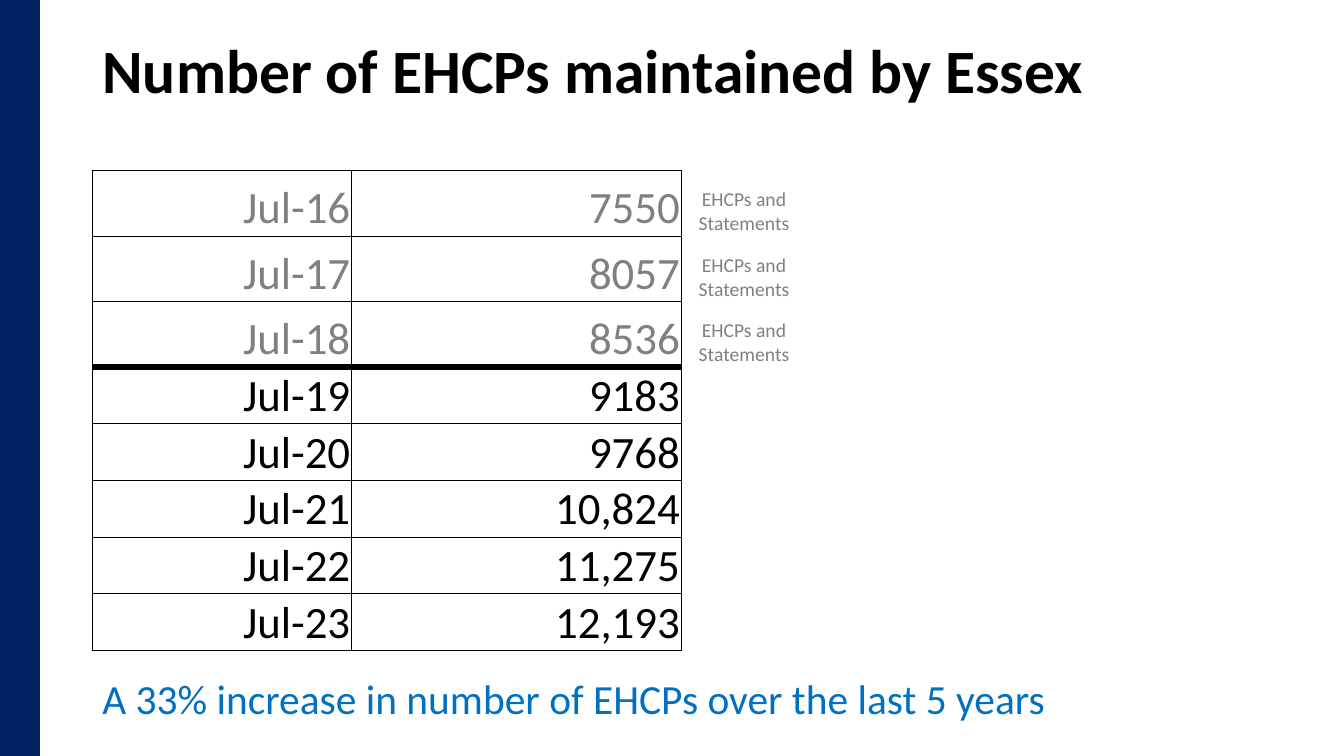
from lxml import etree
from pptx import Presentation
from pptx.dml.color import RGBColor
from pptx.enum.shapes import MSO_SHAPE
from pptx.enum.text import MSO_ANCHOR, MSO_AUTO_SIZE, PP_ALIGN
from pptx.oxml.ns import qn
from pptx.util import Pt

LEFT, RIGHT, CENTER = PP_ALIGN.LEFT, PP_ALIGN.RIGHT, PP_ALIGN.CENTER
TITLE_ONLY = 5
FONT = "Calibri"
BLACK = RGBColor(0x00, 0x00, 0x00)
GREY = RGBColor(0x80, 0x80, 0x80)
BLUE = RGBColor(0x00, 0x70, 0xC0)
NAVY = RGBColor(0x00, 0x20, 0x60)

TITLE = "Number of EHCPs maintained by Essex"
SUMMARY = "A 33% increase in number of EHCPs over the last 5 years"
NOTE = "EHCPs and Statements"
ROWS = [
    ("Jul-16", "7550", NOTE),
    ("Jul-17", "8057", NOTE),
    ("Jul-18", "8536", NOTE),
    ("Jul-19", "9183", ""),
    ("Jul-20", "9768", ""),
    ("Jul-21", "10,824", ""),
    ("Jul-22", "11,275", ""),
    ("Jul-23", "12,193", ""),
]
NOTED_ROWS = sum(1 for row in ROWS if row[2])

SLIDE_WIDTH, SLIDE_HEIGHT = 960, 540
CONTENT_LEFT = 66
COLUMN_WIDTHS = (185, 235.5, 90)
NOTED_HEIGHT, PLAIN_HEIGHT = 46.8, 40.5
THIN, THICK = 0.5, 4.5


def format_text(text_frame, size, color, alignment, bold=False):
    paragraph = text_frame.paragraphs[0]
    paragraph.alignment = alignment
    for run in paragraph.runs:
        run.font.name = FONT
        run.font.size = Pt(size)
        run.font.bold = bold
        run.font.color.rgb = color
    return paragraph


def set_borders(cell, widths):
    """Draw the left, right, top and bottom borders; a width of 0 hides one."""
    properties = cell._tc.get_or_add_tcPr()
    for side, width in zip("LRTB", widths):
        line = etree.SubElement(properties, qn(f"a:ln{side}"), w=str(Pt(width)))
        if width:
            fill = etree.SubElement(line, qn("a:solidFill"))
            etree.SubElement(fill, qn("a:srgbClr"), val=str(BLACK))
        else:
            etree.SubElement(line, qn("a:noFill"))


def add_title(slide):
    title = slide.shapes.title
    title.left, title.top = Pt(CONTENT_LEFT), Pt(0)
    title.width, title.height = Pt(828), Pt(104.4)
    title.text_frame.text = TITLE
    title.text_frame.auto_size = MSO_AUTO_SIZE.NONE
    title.text_frame.vertical_anchor = MSO_ANCHOR.MIDDLE
    format_text(title.text_frame, 44, BLACK, LEFT, bold=True).line_spacing = 0.9


def add_summary(slide):
    box = slide.shapes.add_textbox(Pt(CONTENT_LEFT), Pt(481), Pt(719.3), Pt(41.8))
    box.text_frame.word_wrap = True
    box.text_frame.text = SUMMARY
    format_text(box.text_frame, 29.6, BLUE, LEFT).line_spacing = 0.9


def add_plan_table(slide):
    heights = [NOTED_HEIGHT if note else PLAIN_HEIGHT for _, _, note in ROWS]
    table = slide.shapes.add_table(
        len(ROWS), len(COLUMN_WIDTHS), Pt(CONTENT_LEFT), Pt(121.7),
        Pt(sum(COLUMN_WIDTHS)), Pt(sum(heights))).table
    table.first_row = table.horz_banding = False
    for column, width in zip(table.columns, COLUMN_WIDTHS):
        column.width = Pt(width)
    for row_index, values in enumerate(ROWS):
        table.rows[row_index].height = Pt(heights[row_index])
        color = GREY if row_index < NOTED_ROWS else BLACK
        top = THICK if row_index == NOTED_ROWS else THIN
        bottom = THICK if row_index == NOTED_ROWS - 1 else THIN
        for column_index, value in enumerate(values):
            is_note = column_index == 2
            cell = table.cell(row_index, column_index)
            cell.text_frame.text = value
            cell.vertical_anchor = MSO_ANCHOR.BOTTOM
            cell.margin_left = cell.margin_right = cell.margin_top = Pt(0.75)
            cell.margin_bottom = Pt(0)
            format_text(cell.text_frame, 14 if is_note else 32, color,
                        CENTER if is_note else RIGHT)
            set_borders(cell, (THIN, 0, 0, 0) if is_note
                        else (THIN, THIN, top, bottom))
            cell.fill.background()


def add_side_band(slide):
    band = slide.shapes.add_shape(
        MSO_SHAPE.RECTANGLE, Pt(0), Pt(0), Pt(28.1), Pt(SLIDE_HEIGHT))
    band.shadow.inherit = False
    band.fill.solid()
    band.fill.fore_color.rgb = NAVY
    band.line.color.rgb = NAVY
    band.line.width = Pt(1)


def main():
    presentation = Presentation()
    presentation.slide_width = Pt(SLIDE_WIDTH)
    presentation.slide_height = Pt(SLIDE_HEIGHT)
    slide = presentation.slides.add_slide(presentation.slide_layouts[TITLE_ONLY])
    add_title(slide)
    add_summary(slide)
    add_plan_table(slide)
    add_side_band(slide)
    presentation.save("out.pptx")


if __name__ == "__main__":
    main()
